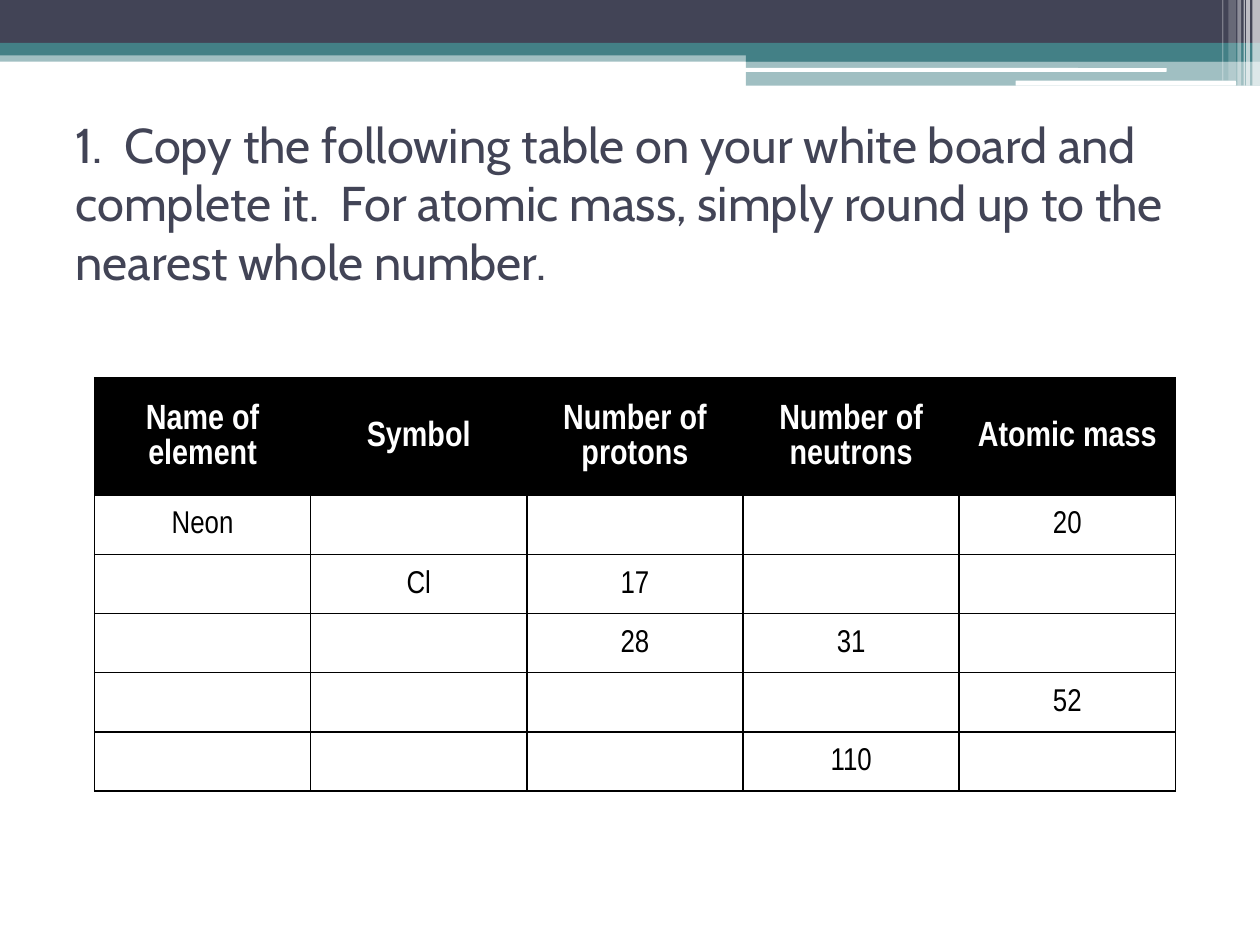
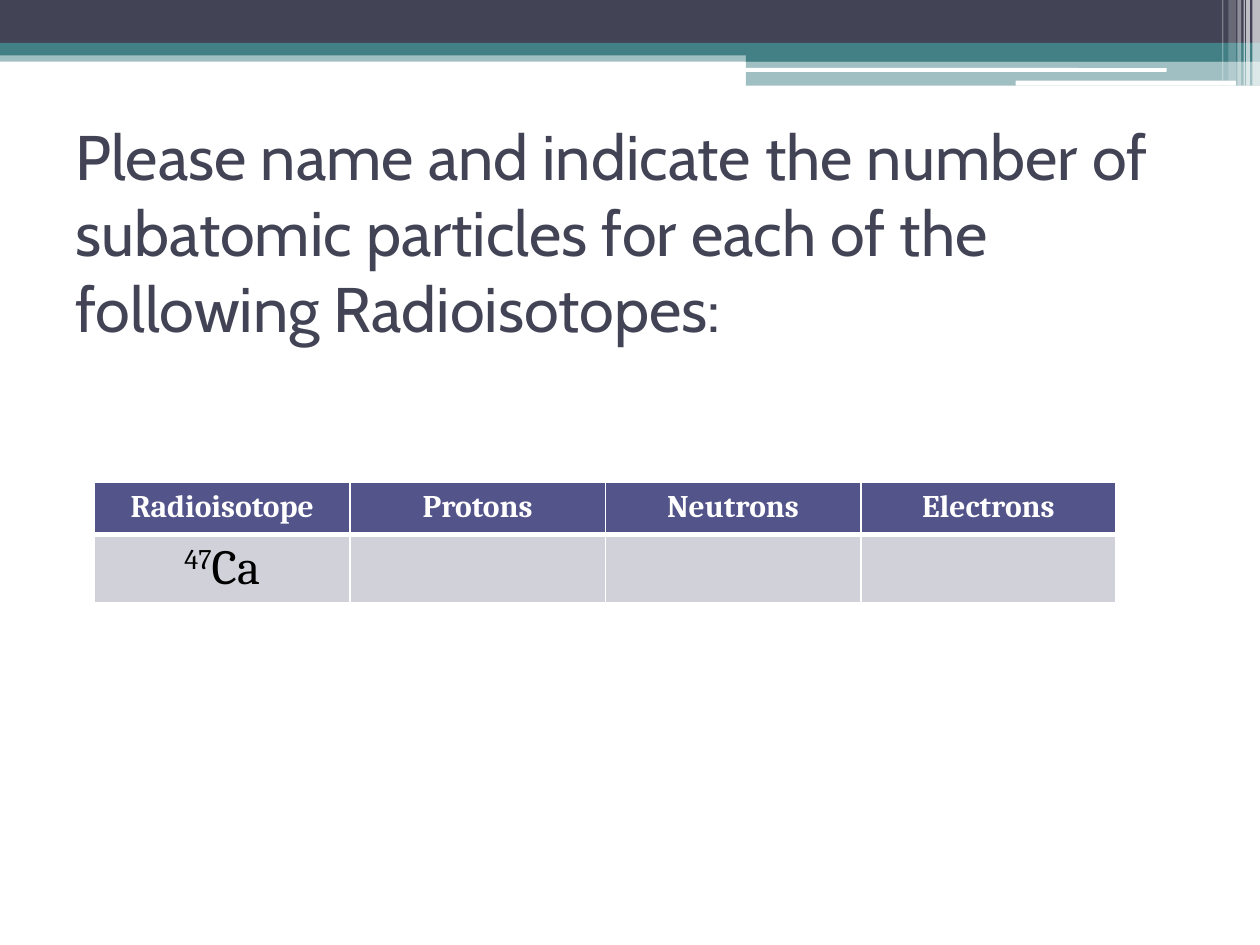
from lxml.etree import SubElement
from pptx import Presentation
from pptx.dml.color import RGBColor
from pptx.enum.shapes import MSO_SHAPE
from pptx.enum.text import MSO_ANCHOR, MSO_AUTO_SIZE, PP_ALIGN
from pptx.oxml.ns import qn
from pptx.util import Pt

PX = 9144  # 100 px to the inch
COLORS = {
    "dark": "424456", "teal": "438086", "white": "FFFFFF",
    "black": "000000", "indigo": "53548A", "mist": "D1D1DA",
}

# Header bands: left, top, width, height, colour, opacity in percent
BANDS = [
    (0, 40, 1000, 9, "teal", 50),
    (0, 0, 1000, 34, "dark", 100),
    (0, 34, 1000, 10, "teal", 100),
    (592, 39, 408, 10, "teal", 100),
    (592, 48, 408, 20, "teal", 50),
]
# White rules cut into the bands: left, top, width, height
RULES = [(591, 54, 335, 3), (806, 64, 175, 4)]
# Upright stripes at the right edge: left, width, height, opacity
STRIPES = [
    (994, 6, 68, 65), (989, 3, 68, 65), (987, 1, 68, 60),
    (982, 3, 68, 40), (975, 6, 64, 20), (970, 1, 64, 30),
]

ATOMS = [
    ["Name of element", "Symbol", "Number of protons",
     "Number of neutrons", "Atomic mass"],
    ["Neon", "", "", "", "20"],
    ["", "Cl", "17", "", ""],
    ["", "", "28", "31", ""],
    ["", "", "", "", "52"],
    ["", "", "", "110", ""],
]
ISOTOPES = ["Radioisotope", "Protons", "Neutrons", "Electrons"]


def rgb(name):
    return RGBColor.from_string(COLORS[name])


def write(frame, text, size, font, color="black", bold=False,
          align=PP_ALIGN.CENTER, space=None, sup=""):
    """Fill the first paragraph; sup is a raised prefix."""
    para = frame.paragraphs[0]
    para.alignment = align
    para.line_spacing = space
    for part, raised in ((sup, True), (text, False)):
        if not part:
            continue
        run = para.add_run()
        run.text = part
        run.font.size = Pt(size)
        run.font.name = font
        run.font.bold = bold
        run.font.color.rgb = rgb(color)
        if raised:
            run.font._element.set("baseline", "30000")


def block(slide, left, top, width, height, color, alpha=100,
          kind=MSO_SHAPE.RECTANGLE):
    shape = slide.shapes.add_shape(
        kind, left * PX, top * PX, width * PX, height * PX)
    shape.shadow.inherit = False
    shape.line.fill.background()
    shape.fill.solid()
    shape.fill.fore_color.rgb = rgb(color)
    if alpha < 100:
        tint = shape.fill._xPr.find(".//" + qn("a:srgbClr"))
        SubElement(tint, qn("a:alpha"), val=str(alpha * 1000))
    return shape


def header(slide, layout):
    """Draw the header once and move it to the layout all slides share."""
    parts = [block(slide, *band) for band in BANDS]
    parts += [block(slide, *rule, "white", kind=MSO_SHAPE.ROUNDED_RECTANGLE)
              for rule in RULES]
    parts += [block(slide, left, 0, width, height, "white", alpha)
              for left, width, height, alpha in STRIPES]
    for place, part in enumerate(parts):
        part._element.nvSpPr.cNvPr.set("id", str(100 + place))
        layout.shapes._spTree.insert(2 + place, part._element)


def title(slide, text, size, foot=5):
    """Set the title; foot is the bottom inset that lifts the text."""
    shape = slide.shapes.title
    shape.left, shape.top = 50 * PX, 125 * PX
    shape.width, shape.height = 900 * PX, 117 * PX
    frame = shape.text_frame
    frame.word_wrap = True
    frame.auto_size = MSO_AUTO_SIZE.NONE
    frame.vertical_anchor = MSO_ANCHOR.MIDDLE
    frame.margin_bottom = foot * PX
    write(frame, text, size, "Cabin", "dark", align=PP_ALIGN.LEFT)


def grid(slide, left, top, width, heights, cols):
    """Add a plain table with equal columns."""
    table = slide.shapes.add_table(
        len(heights), cols, left * PX, top * PX,
        width * PX, sum(heights) * PX).table
    table.first_row = table.horz_banding = False
    for row, height in zip(table.rows, heights):
        row.height = height * PX
    return table


def paint(cell, fill, edge, top=1, bottom=1):
    """Set a cell's fill and its four borders, widths in points."""
    if fill:
        cell.fill.solid()
        cell.fill.fore_color.rgb = rgb(fill)
    else:
        cell.fill.background()
    props = cell._tc.get_or_add_tcPr()
    sides = {"L": 1, "R": 1, "T": top, "B": bottom}
    for place, (side, width) in enumerate(sides.items()):
        line = SubElement(props, qn("a:ln" + side), w=str(Pt(width)))
        solid = SubElement(line, qn("a:solidFill"))
        SubElement(solid, qn("a:srgbClr"), val=COLORS[edge])
        props.insert(place, line)


def atoms(slide):
    table = grid(slide, 75, 300, 858, [93] + [47] * 5, 5)
    for r, row in enumerate(ATOMS):
        head = r == 0
        for c, text in enumerate(row):
            cell = table.cell(r, c)
            paint(cell, "black" if head else None, "black")
            if not text:
                continue
            cell.margin_left = cell.margin_right = 7 * PX
            cell.margin_top = cell.margin_bottom = 0
            cell.vertical_anchor = MSO_ANCHOR.MIDDLE
            write(cell.text_frame, text, 20 if head else 18, "Arial Narrow",
                  "white" if head else "black", bold=head, space=1.07)


def isotopes(slide):
    table = grid(slide, 75, 383, 811, [41, 53], 4)
    for c, text in enumerate(ISOTOPES):
        head, body = table.cell(0, c), table.cell(1, c)
        paint(head, "indigo", "white", bottom=3)
        paint(body, "mist", "white", top=3)
        write(head.text_frame, text, 18, "Cambria", "white", bold=True)
    write(table.cell(1, 0).text_frame, "Ca", 28, "Cambria", sup="47")


def main():
    deck = Presentation()
    deck.slide_width, deck.slide_height = 1000 * PX, 750 * PX
    layout = deck.slide_layouts[5]

    # Element table
    first = deck.slides.add_slide(layout)
    header(first, layout)
    title(first, "1.  Copy the following table on your white board and "
          "complete it.  For atomic mass, simply round up to the nearest "
          "whole number.", 27.9, foot=51)
    atoms(first)

    # Radioisotope table
    second = deck.slides.add_slide(layout)
    title(second, "Please name and indicate the number of subatomic "
          "particles for each of the following Radioisotopes:", 36)
    isotopes(second)

    deck.save("out.pptx")


if __name__ == "__main__":
    main()
